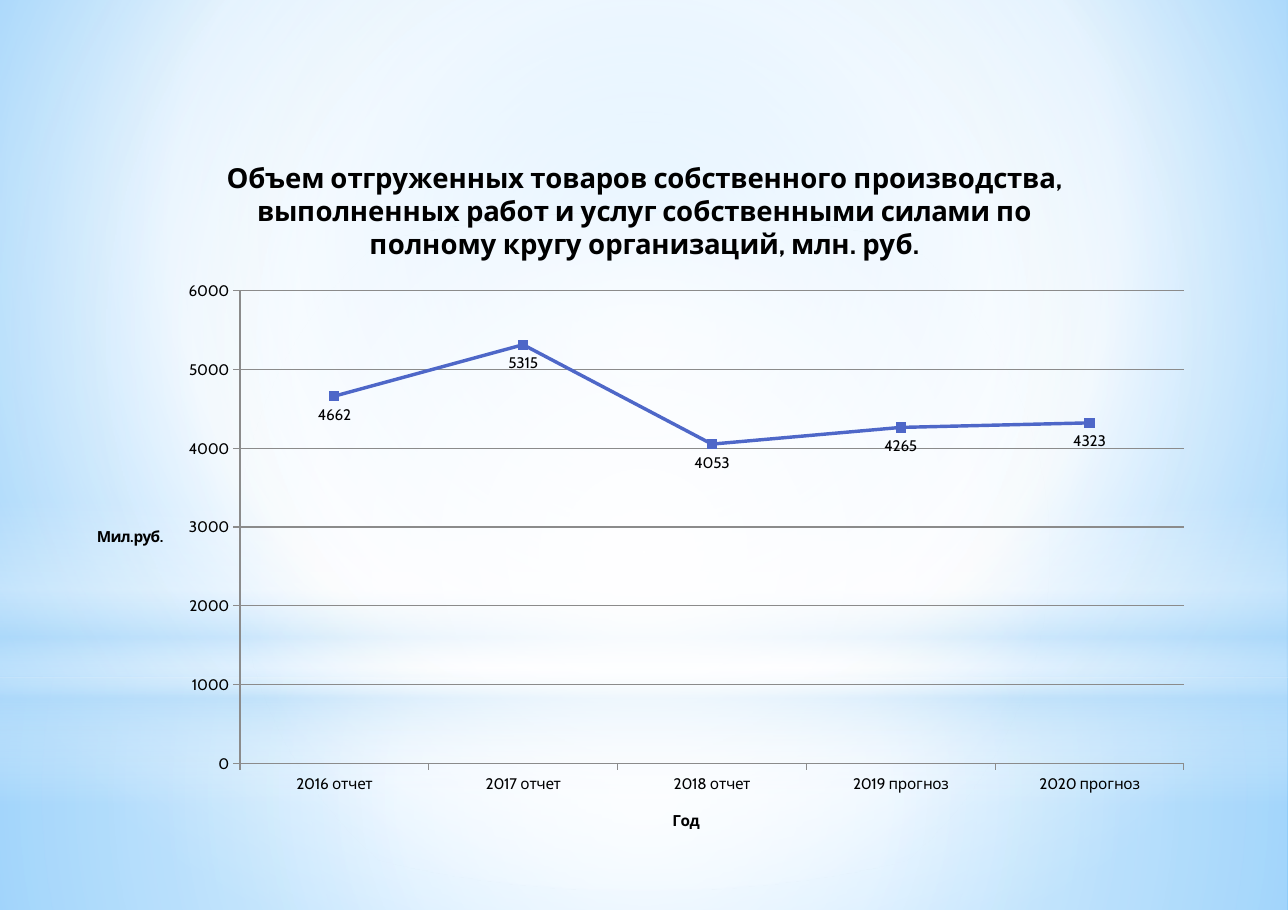
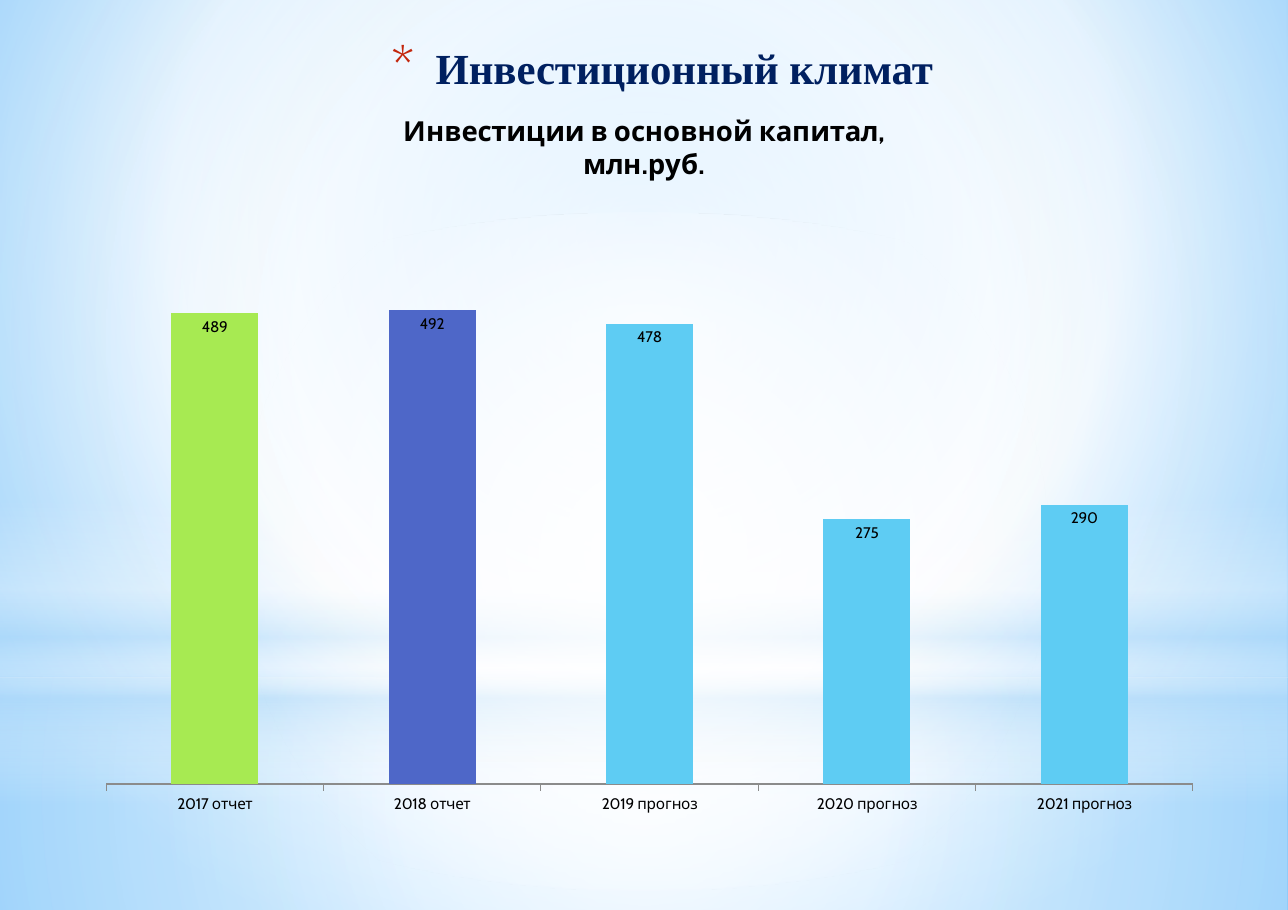
from lxml.etree import SubElement
from pptx import Presentation
from pptx.chart.data import CategoryChartData as ChartData
from pptx.dml.color import RGBColor
from pptx.enum.chart import XL_CHART_TYPE as ChartKind
from pptx.enum.chart import XL_LABEL_POSITION as LabelSpot
from pptx.enum.chart import XL_MARKER_STYLE as Marker
from pptx.enum.chart import XL_TICK_MARK as Tick
from pptx.enum.shapes import MSO_SHAPE as Preset
from pptx.enum.text import MSO_ANCHOR as Anchor
from pptx.enum.text import MSO_AUTO_SIZE as AutoSize
from pptx.enum.text import PP_ALIGN as Align
from pptx.oxml.ns import qn
from pptx.util import Pt

WIDTH, HEIGHT = 841.68, 594.72
BLANK, TITLE_ONLY = 6, 5
BLUE, GREEN, SKY = "4E67C8", "A7EA52", "5ECCF3"
BLACK, GRAY, NAVY, RED = "000000", "8B8B8B", "002060", "C3260C"
WHITE, PALE = "FFFFFF", "B4DCFA"
CENTER = (50, 50, 50, 50)

BACKDROP = dict(stops=[(0, "9ED5FF", 100), (60, WHITE, 100), (100, "5BB9FF", 100)],
                focus=(20, 10, 20, 60))
BANDS = [
    (Preset.RECTANGLE, 442.8, 151.92,
     dict(stops=[(0, WHITE, 91), (37, WHITE, 76), (100, PALE, 79)], focus=CENTER)),
    (Preset.RECTANGLE, 0, 442.8,
     dict(stops=[(0, WHITE, 89), (48, WHITE, 62), (100, PALE, 79)], focus=CENTER)),
    (Preset.RECTANGLE, 326.88, 198,
     dict(stops=[(0, WHITE, 0), (29, WHITE, 30), (45, PALE, 40),
                 (55, WHITE, 26), (65, PALE, 60), (100, WHITE, 0)])),
    (Preset.OVAL, 138.96, 442.8,
     dict(stops=[(0, WHITE, 100), (56, WHITE, 0)], focus=CENTER)),
]


def tint(code):
    """Turn a hex string into a colour."""
    return RGBColor.from_string(code)


def assign(target, values):
    """Set attributes of an object from a dict."""
    for name, value in values.items():
        setattr(target, name, value)


def add_node(parent, tag, **values):
    """Append an XML element with the given attributes."""
    return SubElement(parent, qn(tag), {name: str(value) for name, value in values.items()})


def paint_gradient(owner, fill, stops, focus=None):
    """Give a fill a circular gradient, or a vertical one without a focus."""
    fill.gradient()
    gradient = next(owner.iter(qn("a:gradFill")))
    for child in list(gradient):
        gradient.remove(child)
    stop_list = add_node(gradient, "a:gsLst")
    for position, code, opacity in stops:
        stop = add_node(stop_list, "a:gs", pos=position * 1000)
        color = add_node(stop, "a:srgbClr", val=code)
        if opacity < 100:
            add_node(color, "a:alpha", val=opacity * 1000)
    if focus:
        circle = add_node(gradient, "a:path", path="circle")
        edges = {side: share * 1000 for side, share in zip("ltrb", focus)}
        add_node(circle, "a:fillToRect", **edges)
    else:
        add_node(gradient, "a:lin", ang=90 * 60000, scaled=1)


class Report:
    """Holds the deck, its style and the current page."""

    label_font = dict(name="Cabin", size=Pt(10), bold=False)
    axis_font = dict(name="Cabin", size=Pt(10), bold=True)
    chart_title_font = dict(name="Cabin", size=Pt(18), bold=True)
    title_font = dict(name="Times New Roman", size=Pt(28), bold=True)

    def __init__(self):
        """Start the deck and set its size."""
        self.deck = Presentation()
        assign(self.deck, dict(slide_width=Pt(WIDTH), slide_height=Pt(HEIGHT)))
        self.page = None

    def add_page(self, layout):
        """Add a page and make it current."""
        self.page = self.deck.slides.add_slide(self.deck.slide_layouts[layout])

    def dress_master(self):
        """Put the backdrop and the soft bands on the master."""
        master = self.deck.slide_master
        paint_gradient(master.element, master.background.fill, **BACKDROP)
        for index, (preset, top, height, gradient) in enumerate(BANDS):
            band = self.page.shapes.add_shape(preset, 0, Pt(top), Pt(WIDTH), Pt(height))
            band.shadow.inherit = False
            band.line.fill.background()
            paint_gradient(band.element, band.fill, **gradient)
            band.element.nvSpPr.cNvPr.id = 20 + index
            master.shapes.element.insert(2 + index, band.element)

    def style_font(self, font, values, code=BLACK):
        """Apply font values and a colour."""
        assign(font, values)
        font.color.rgb = tint(code)

    def add_title(self, text, left, top, width, height):
        """Fill the title placeholder, marked with a red asterisk."""
        box = self.page.shapes.title
        assign(box, dict(left=Pt(left), top=Pt(top), width=Pt(width), height=Pt(height)))
        assign(box.text_frame, dict(word_wrap=True, auto_size=AutoSize.NONE,
                                    vertical_anchor=Anchor.MIDDLE))
        para = box.text_frame.paragraphs[0]
        para.alignment = Align.CENTER
        span = para.add_run()
        span.text = text
        self.style_font(span.font, self.title_font, NAVY)
        marks = para._p.get_or_add_pPr()
        indent = Pt(28.8)
        marks.set("marL", str(indent))
        marks.set("indent", str(-indent))
        add_node(add_node(marks, "a:buClr"), "a:srgbClr", val=RED)
        add_node(marks, "a:buSzPct", val=128000)
        add_node(marks, "a:buFont", typeface="Cabin")
        add_node(marks, "a:buChar", char="*")

    def write_heading(self, heading, text, font):
        """Write a chart or axis title, one paragraph a line."""
        heading.text_frame.text = text
        for para in heading.text_frame.paragraphs:
            for span in para.runs:
                self.style_font(span.font, font)

    def title_axis(self, axis, text):
        """Give an axis a horizontal title."""
        self.write_heading(axis.axis_title, text, self.axis_font)
        body = axis.axis_title.text_frame._txBody.bodyPr
        for name, value in dict(rot="0", vert="horz").items():
            body.set(name, value)

    def draw_line(self, line, code, weight):
        """Set the colour and weight of a line."""
        line.color.rgb = tint(code)
        line.width = Pt(weight)

    def place_plot(self, chart, frame):
        """Fix the inner plot area as shares of the chart."""
        area = chart.element.find(".//" + qn("c:plotArea"))
        for old in area.findall(qn("c:layout")):
            area.remove(old)
        layout = add_node(area, "c:layout")
        area.insert(0, layout)
        manual = add_node(layout, "c:manualLayout")
        add_node(manual, "c:layoutTarget", val="inner")
        for side in "xy":
            add_node(manual, f"c:{side}Mode", val="edge")
        for side, share in zip("xywh", frame):
            add_node(manual, f"c:{side}", val=share)

    def add_chart(self, kind, place, title, cats, values, top_value, spot, plot):
        """Add a chart of one labelled series and return it."""
        data = ChartData(number_format="0")
        data.categories = cats
        data.add_series("Series 1", values)
        chart = self.page.shapes.add_chart(kind, *map(Pt, place), data).chart
        chart.has_legend = False
        self.style_font(chart.font, self.label_font)
        self.write_heading(chart.chart_title, title, self.chart_title_font)
        chart.chart_title.include_in_layout = False
        self.place_plot(chart, plot)
        assign(chart.value_axis, dict(minimum_scale=0, maximum_scale=top_value,
                                      has_major_gridlines=False))
        for axis in (chart.category_axis, chart.value_axis):
            assign(axis, dict(major_tick_mark=Tick.OUTSIDE, minor_tick_mark=Tick.NONE))
            self.draw_line(axis.format.line, GRAY, 0.75)
        chart.plots[0].vary_by_categories = False
        labels = chart.plots[0].series[0].data_labels
        assign(labels, dict(show_value=True, position=spot, number_format="0",
                            number_format_is_linked=False))
        self.style_font(labels.font, self.label_font)
        return chart

    def add_line_chart(self, cat_title, value_title, step, **content):
        """Add a line chart with gridlines and titled axes."""
        chart = self.add_chart(ChartKind.LINE_MARKERS, spot=LabelSpot.BELOW, **content)
        self.title_axis(chart.category_axis, cat_title)
        self.title_axis(chart.value_axis, value_title)
        assign(chart.value_axis, dict(has_major_gridlines=True, major_unit=step))
        self.draw_line(chart.value_axis.major_gridlines.format.line, GRAY, 0.75)
        series = chart.plots[0].series[0]
        series.smooth = False
        self.draw_line(series.format.line, BLUE, 2.25)
        assign(series.marker, dict(style=Marker.SQUARE, size=6))
        series.marker.format.fill.solid()
        series.marker.format.fill.fore_color.rgb = tint(BLUE)
        self.draw_line(series.marker.format.line, BLUE, 0.75)

    def add_column_chart(self, colors, **content):
        """Add a column chart with a colour for each column."""
        chart = self.add_chart(ChartKind.COLUMN_STACKED, spot=LabelSpot.INSIDE_END, **content)
        chart.value_axis.visible = False
        assign(chart.plots[0], dict(gap_width=150, overlap=100))
        series = chart.plots[0].series[0]
        for index, code in enumerate(colors):
            fill = series.points[index].format.fill
            fill.solid()
            fill.fore_color.rgb = tint(code)


def main():
    """Build and save the deck."""
    report = Report()
    report.add_page(BLANK)
    report.dress_master()
    report.add_line_chart(
        cat_title="Год", value_title="Мил.руб.", step=1000,
        place=(54, 87.12, 734.4, 468),
        title="Объем отгруженных товаров собственного производства, выполненных работ "
              "и услуг собственными силами по полному кругу организаций, млн. руб.",
        cats=["2016 отчет", "2017 отчет", "2018 отчет", "2019 прогноз", "2020 прогноз"],
        values=[4662, 5315, 4053, 4265, 4323],
        top_value=6000, plot=(0.14, 0.22, 0.84, 0.66))

    report.add_page(TITLE_ONLY)
    report.add_title("Инвестиционный климат", 48.24, 18, 768.96, 51.84)
    report.add_column_chart(
        colors=[GREEN, BLUE, SKY, SKY, SKY],
        place=(54.72, 58.32, 732.24, 478.08),
        title="Инвестиции в основной капитал,\nмлн.руб.",
        cats=["2017 отчет", "2018 отчет", "2019 прогноз", "2020 прогноз", "2021 прогноз"],
        values=[489, 492, 478, 275, 290],
        top_value=600, plot=(0.02, 0.16, 0.97, 0.79))
    report.deck.save("out.pptx")


if __name__ == "__main__":
    main()
